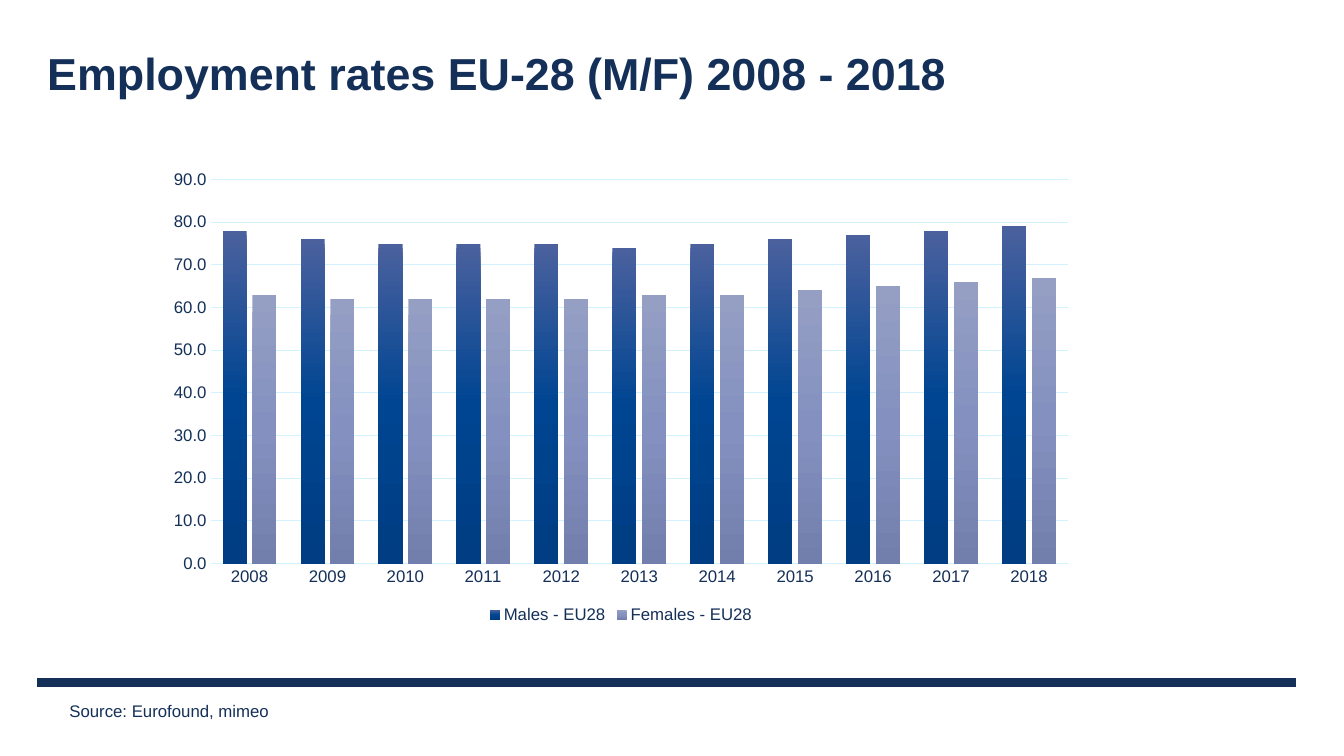
from copy import deepcopy

from lxml.etree import SubElement
from pptx import Presentation
from pptx.chart.data import CategoryChartData as ChartData
from pptx.dml.color import RGBColor as RGB
from pptx.enum.chart import XL_CHART_TYPE as ChartType
from pptx.enum.chart import XL_LEGEND_POSITION as LegendPos
from pptx.enum.chart import XL_TICK_MARK as Tick
from pptx.enum.shapes import MSO_CONNECTOR as Connector
from pptx.enum.text import MSO_ANCHOR as Anchor
from pptx.oxml.ns import qn
from pptx.util import Pt

COLORS = {"navy": "143058", "grid": "D2F2FF"}
GRADIENTS = {
    "Males - EU28": ("4B619E", "004592", "003D82"),
    "Females - EU28": ("959FC4", "8491C0", "727FAD"),
}
RATES = {
    "Males - EU28": (78, 76, 75, 75, 75, 74, 75, 76, 77, 78, 79),
    "Females - EU28": (63, 62, 62, 62, 62, 63, 63, 64, 65, 66, 67),
}
YEARS = [str(year) for year in range(2008, 2019)]


class SlideBuilder:
    font_name = "Arial"

    def __init__(self, slide):
        self.s = slide

    def style_font(self, font, size, bold=False):
        font.name = self.font_name
        font.size = Pt(size)
        font.bold = bold
        font.color.rgb = RGB.from_string(COLORS["navy"])

    def style_line(self, line, color, width):
        line.color.rgb = RGB.from_string(COLORS[color])
        line.width = Pt(width)

    def text(self, box, text, size, bold=False, anchor=Anchor.TOP):
        sp = self.s.shapes.add_textbox(*map(Pt, box))
        tf = sp.text_frame
        tf.word_wrap = True
        tf.vertical_anchor = anchor
        tf.text = text
        self.style_font(tf.paragraphs[0].runs[0].font, size, bold)

    def rule(self, x1, x2, y, width):
        sp = self.s.shapes.add_connector(
            Connector.STRAIGHT, Pt(x1), Pt(y), Pt(x2), Pt(y))
        self.style_line(sp.line, "navy", width)
        SubElement(sp._element.spPr, qn("a:effectLst"))

    def gradient(self, series, colors):
        fill = series.format.fill
        fill.gradient()
        fill.gradient_angle = 270  # top to bottom
        first = series._element.find(".//" + qn("a:gs"))
        first.addnext(deepcopy(first))
        for stop, color, position in zip(fill.gradient_stops, colors, (0, 0.5, 1)):
            stop.color.rgb = RGB.from_string(color)
            stop.position = position

    def column_chart(self, box, categories, values, gradients):
        data = ChartData(number_format="#,##0.0")
        data.categories = categories
        for name, rates in values.items():
            data.add_series(name, rates)
        chart = self.s.shapes.add_chart(
            ChartType.COLUMN_CLUSTERED, *map(Pt, box), data).chart
        self.style_font(chart.font, 10)
        chart.has_title = False

        # Columns
        plot = chart.plots[0]
        plot.gap_width, plot.overlap = 100, -24
        plot.vary_by_categories = False
        for series in plot.series:
            self.gradient(series, gradients[series.name])

        # Axes
        cat, val = chart.category_axis, chart.value_axis
        for axis in (cat, val):
            axis.major_tick_mark = axis.minor_tick_mark = Tick.NONE
            self.style_font(axis.tick_labels.font, 12)
        self.style_line(cat.format.line, "grid", 0.75)
        val.format.line.fill.background()
        val.minimum_scale, val.maximum_scale, val.major_unit = 0, 90, 10
        val.has_major_gridlines = True
        self.style_line(val.major_gridlines.format.line, "grid", 0.75)
        val.tick_labels.number_format = "#,##0.0"
        val.tick_labels.number_format_is_linked = False

        # Legend
        chart.has_legend = True
        chart.legend.position = LegendPos.BOTTOM
        chart.legend.include_in_layout = False
        self.style_font(chart.legend.font, 12)


def main():
    prs = Presentation()
    prs.slide_width, prs.slide_height = Pt(960), Pt(540)
    builder = SlideBuilder(prs.slides.add_slide(prs.slide_layouts[6]))

    # Footer rule
    builder.rule(26.64, 925.92, 487.44, 6)

    # Title
    builder.text((26.64, 21.6, 899.28, 61.2),
                 "Employment rates EU-28 (M/F) 2008 - 2018",
                 32, bold=True, anchor=Anchor.MIDDLE)

    # Employment rates
    builder.column_chart((110.88, 115.2, 665.28, 333.36), YEARS, RATES, GRADIENTS)

    # Source
    builder.text((42.48, 496.8, 298.08, 21.6), "Source: Eurofound, mimeo", 12)

    prs.save("out.pptx")


if __name__ == "__main__":
    main()
